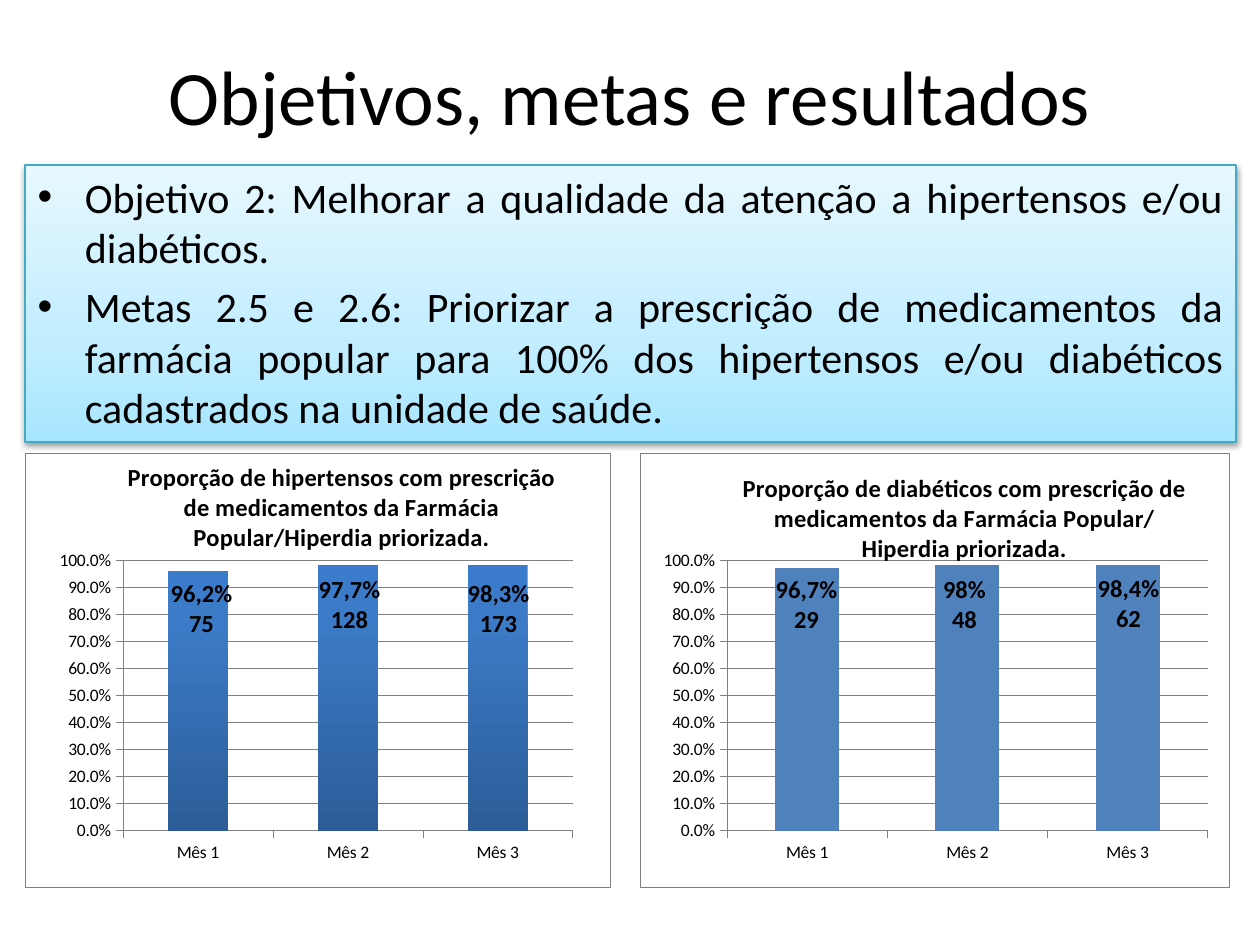
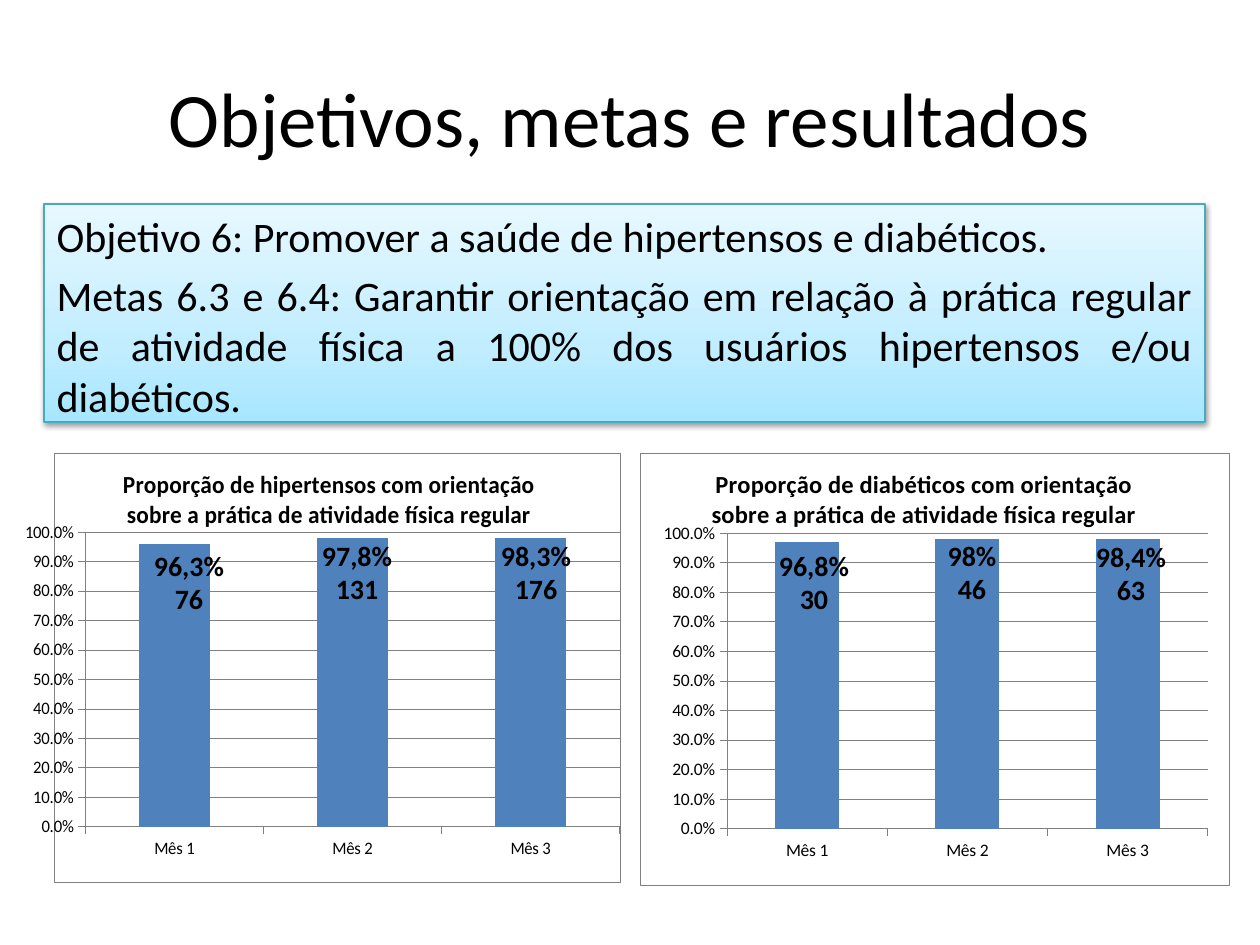
from lxml.etree import SubElement
from pptx import Presentation
from pptx.chart.data import CategoryChartData
from pptx.dml.color import RGBColor
from pptx.enum.chart import XL_CHART_TYPE, XL_TICK_MARK
from pptx.enum.text import MSO_ANCHOR, MSO_AUTO_SIZE, PP_ALIGN
from pptx.oxml import parse_xml
from pptx.oxml.ns import nsdecls, qn
from pptx.util import Emu, Pt

PX = 914400 // 126
FONT = "Calibri"
BLACK = RGBColor(0x00, 0x00, 0x00)
GRAY = RGBColor(0x80, 0x80, 0x80)
BLUE = RGBColor(0x4F, 0x81, 0xBD)
TEAL = RGBColor(0x46, 0xAA, 0xC5)
PANEL_STOPS = [(0, RGBColor(0xA7, 0xE6, 0xFF)), (35, RGBColor(0xC1, 0xED, 0xFF)),
               (100, RGBColor(0xE7, 0xF8, 0xFF))]
BAR_STOPS = [(0, RGBColor(0x3A, 0x7C, 0xCB)), (20, RGBColor(0x3C, 0x7B, 0xC7)),
             (100, RGBColor(0x2C, 0x5D, 0x98))]
MONTHS = ["Mês 1", "Mês 2", "Mês 3"]
FRAME_XML = (f'<c:spPr {nsdecls("c", "a")}><a:solidFill><a:srgbClr val="FFFFFF"/></a:solidFill>'
             '<a:ln w="3175"><a:solidFill><a:srgbClr val="808080"/></a:solidFill></a:ln></c:spPr>')
PLOT_XML = (f'<c:spPr {nsdecls("c", "a")}><a:solidFill><a:srgbClr val="FFFFFF"/></a:solidFill>'
            '<a:ln><a:noFill/></a:ln></c:spPr>')
SHADOW_XML = (f'<a:outerShdw {nsdecls("a")} blurRad="40000" dist="20000" dir="5400000" '
              'rotWithShape="0"><a:srgbClr val="000000"><a:alpha val="38000"/></a:srgbClr>'
              '</a:outerShdw>')

# Chart: frame, title, title corner and plot area within the frame, bar stops,
# labels (left, top, percent, patients)
SLIDES = [
    {
        "title_top": 16,
        "panel": (25, 165, 1211, 277),
        "bullets": True,
        "goals": [
            "Objetivo 2: Melhorar a qualidade da atenção a hipertensos e/ou diabéticos.",
            "Metas 2.5 e 2.6: Priorizar a prescrição de medicamentos da farmácia popular para "
            "100% dos hipertensos e/ou diabéticos cadastrados na unidade de saúde.",
        ],
        "label": (95, 72, 14),
        "charts": [
            ((25, 453, 585, 434),
             "Proporção de hipertensos com prescrição de medicamentos da Farmácia "
             "Popular/Hiperdia priorizada.",
             (98, 2), (98, 107, 450, 271), BAR_STOPS,
             [(154, 572, 96.2, 75), (302, 568, 97.7, 128), (451, 572, 98.3, 173)]),
            ((640, 453, 590, 434),
             "Proporção de diabéticos com prescrição de medicamentos da Farmácia "
             "Popular/Hiperdia priorizada.",
             (98, 13), (87, 107, 481, 271), None,
             [(759, 568, 96.7, 29), (917, 568, 98, 48), (1081, 567, 98.4, 62)]),
        ],
    },
    {
        "title_top": 38,
        "panel": (44, 204, 1161, 218),
        "bullets": False,
        "goals": [
            "Objetivo 6: Promover a saúde de hipertensos e diabéticos.",
            "Metas 6.3 e 6.4: Garantir orientação em relação à prática regular de atividade "
            "física a 100% dos usuários hipertensos e/ou diabéticos.",
        ],
        "label": (110, 81, 16),
        "charts": [
            ((25, 453, 595, 429),
             "Proporção de hipertensos com orientação sobre a prática de atividade física regular",
             (68, 9), (115, 79, 562, 295), None,
             [(134, 542, 96.3, 76), (302, 532, 97.8, 131), (481, 532, 98.3, 176)]),
            ((640, 453, 590, 432),
             "Proporção de diabéticos com orientação sobre a prática de atividade física regular",
             (67, 9), (87, 80, 481, 296), None,
             [(759, 542, 96.8, 30), (917, 532, 98, 46), (1076, 533, 98.4, 63)]),
        ],
    },
]


def paint_gradient(fill, owner, stops, angle):
    fill.gradient()
    fill.gradient_angle = angle
    stop_list = next(owner.iter(qn("a:gsLst")))
    stop_list.clear()
    for percent, color in stops:
        stop = SubElement(stop_list, qn("a:gs"), pos=str(percent * 1000))
        SubElement(stop, qn("a:srgbClr"), val=str(color))


def set_layout(parent, frame_size, lengths, **modes):
    """Place a chart title or plot area, turning px within the frame into fractions."""
    layout = parent.find(qn("c:layout"))
    if layout is None:
        layout = parse_xml(f'<c:layout {nsdecls("c")}/>')
        parent.insert(0, layout)
    manual = SubElement(layout, qn("c:manualLayout"))
    fractions = [length / side for length, side in zip(lengths, frame_size * 2)]
    values = {**modes, "xMode": "edge", "yMode": "edge", **dict(zip("xywh", fractions))}
    for name, value in values.items():
        SubElement(manual, qn(f"c:{name}"), val=str(value))


deck = Presentation()
deck.slide_width, deck.slide_height = Emu(1260 * PX), Emu(945 * PX)

for content in SLIDES:
    slide = deck.slides.add_slide(deck.slide_layouts[1])
    title, panel = slide.shapes.title, slide.placeholders[1]
    for holder, place in ((title, (63, content["title_top"], 1134, 158)),
                          (panel, content["panel"])):
        holder.left, holder.top, holder.width, holder.height = [Emu(n * PX) for n in place]
        holder.text_frame.auto_size = MSO_AUTO_SIZE.NONE

    title.text_frame.vertical_anchor = MSO_ANCHOR.MIDDLE
    para = title.text_frame.paragraphs[0]
    para.alignment = PP_ALIGN.CENTER
    span = para.add_run()
    span.text = "Objetivos, metas e resultados"
    span.font.size, span.font.name = Pt(44), FONT
    span.font.color.rgb = BLACK

    paint_gradient(panel.fill, panel._element, PANEL_STOPS, 90)
    panel.line.color.rgb = TEAL
    panel.line.width = Pt(0.75)
    panel.shadow.inherit = False
    next(panel._element.iter(qn("a:effectLst"))).append(parse_xml(SHADOW_XML))
    for index, goal in enumerate(content["goals"]):
        frame = panel.text_frame
        para = frame.add_paragraph() if index else frame.paragraphs[0]
        if not content["bullets"]:
            properties = para._p.get_or_add_pPr()
            properties.set("marL", "0")
            properties.set("indent", "0")
            SubElement(properties, qn("a:buNone"))
        para.alignment = PP_ALIGN.JUSTIFY
        para.space_before = Pt(5 if index else 0)
        span = para.add_run()
        span.text = goal
        span.font.size, span.font.name = Pt(24), FONT
        span.font.color.rgb = BLACK

    for place, heading, corner, plot_place, bar_stops, labels in content["charts"]:
        data = CategoryChartData(number_format="0.0%")
        data.categories = MONTHS
        data.add_series(heading, [round(percent / 100, 2) for _, _, percent, _ in labels])
        chart = slide.shapes.add_chart(XL_CHART_TYPE.COLUMN_CLUSTERED,
                                       *[Emu(n * PX) for n in place], data).chart
        chart.has_legend = False
        chart.font.size, chart.font.name = Pt(10), FONT
        chart.font.color.rgb = BLACK

        chart.has_title = True
        span = chart.chart_title.text_frame.paragraphs[0].add_run()
        span.text = heading
        span.font.size, span.font.name, span.font.bold = Pt(14), FONT, True
        span.font.color.rgb = BLACK
        set_layout(chart.chart_title._element, place[2:], corner)

        plot_area = next(chart._chartSpace.iter(qn("c:plotArea")))
        set_layout(plot_area, place[2:], plot_place, layoutTarget="inner")
        plot_area.append(parse_xml(PLOT_XML))
        chart._chartSpace.find(qn("c:chart")).addnext(parse_xml(FRAME_XML))

        plot = chart.plots[0]
        plot.gap_width = 150
        plot.vary_by_categories = False
        series = plot.series[0]
        if bar_stops:
            paint_gradient(series.format.fill, series._element, bar_stops, 270)
        else:
            series.format.fill.solid()
            series.format.fill.fore_color.rgb = BLUE

        scale = chart.value_axis
        scale.minimum_scale, scale.maximum_scale, scale.major_unit = 0, 1, 0.1
        scale.tick_labels.number_format = "0.0%"
        scale.tick_labels.number_format_is_linked = False
        for axis in (chart.category_axis, scale):
            axis.major_tick_mark = XL_TICK_MARK.OUTSIDE
            axis.tick_labels.font.size = Pt(10)
        for ruled in (chart.category_axis, scale, scale.major_gridlines):
            ruled.format.line.color.rgb = GRAY
            ruled.format.line.width = Pt(0.25)

    label_width, label_height, label_size = content["label"]
    for *_, labels in content["charts"]:
        for left, top, percent, patients in labels:
            box = slide.shapes.add_textbox(*[Emu(n * PX) for n in
                                             (left, top, label_width, label_height)])
            frame = box.text_frame
            frame.word_wrap = True
            frame.auto_size = MSO_AUTO_SIZE.SHAPE_TO_FIT_TEXT
            for index, words in enumerate((f"{percent}%".replace(".", ","), str(patients))):
                para = frame.add_paragraph() if index else frame.paragraphs[0]
                para.alignment = PP_ALIGN.CENTER
                span = para.add_run()
                span.text = words
                span.font.size, span.font.name, span.font.bold = Pt(label_size), FONT, True
                span.font.color.rgb = BLACK

deck.save("out.pptx")
